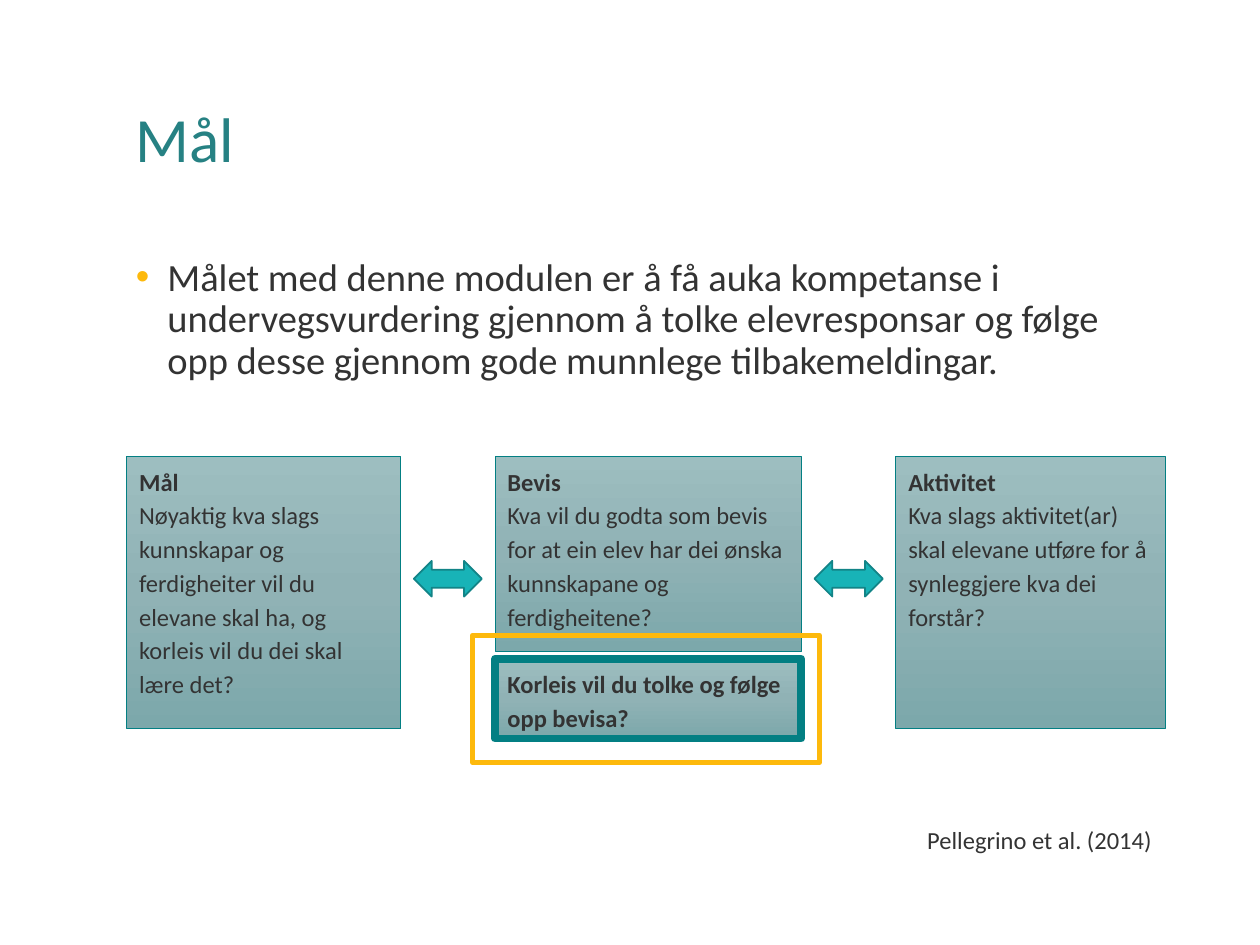
from copy import deepcopy

from lxml.etree import SubElement
from pptx import Presentation
from pptx.dml.color import RGBColor
from pptx.enum.shapes import MSO_SHAPE as Preset
from pptx.enum.text import MSO_ANCHOR as Anchor, PP_ALIGN as Align
from pptx.oxml.ns import qn
from pptx.util import Pt

# Content: lengths in points, boxes as left, top, width, height
TITLE = "Mål"
GOAL = ("Målet med denne modulen er å få auka kompetanse i undervegsvurdering "
        "gjennom å tolke elevresponsar og følge opp desse gjennom gode munnlege "
        "tilbakemeldingar.")
SOURCE = "Pellegrino et al. (2014)"

ROW_TOP = 260.6
COLUMNS = [  # left, width, height, heading, question
    (72.4, 156.6, 155.8, "Mål",
     "Nøyaktig kva slags kunnskapar og ferdigheiter vil du elevane skal ha, "
     "og korleis vil du dei skal lære det?"),
    (282.9, 175, 111.5, "Bevis",
     "Kva vil du godta som bevis for at ein elev har dei ønska kunnskapane "
     "og ferdigheitene?"),
    (512, 153.8, 155.8, "Aktivitet",
     "Kva slags aktivitet(ar) skal elevane utføre for å synleggjere kva dei "
     "forstår?"),
]
FOLLOW_UP = "Korleis vil du tolke og følge opp bevisa?"
FOLLOW_UP_BOX = (282.9, 376.4, 175, 45.6)
HIGHLIGHT_BOX = (270, 363, 198.2, 72.6)

ARROW_TOP, ARROW_HEIGHT, ARROW_GAP = 320.5, 20.4, 7.5
GRADIENT = [(0, "9DBEC0"), (0.5, "90B2B5"), (1, "7CA8AB")]
TEAL, YELLOW, DARK = "037F83", "FDB90C", "333333"


def color(value):
    return RGBColor.from_string(value)


def write(shape, paragraphs, size=14, text_color=DARK, spacing=1.0,
          anchor=Anchor.TOP):
    """Fill a shape with (text, bold) paragraphs."""
    frame = shape.text_frame
    frame.word_wrap = True
    frame.vertical_anchor = anchor
    for index, (text, bold) in enumerate(paragraphs):
        paragraph = frame.add_paragraph() if index else frame.paragraphs[0]
        paragraph.alignment = Align.LEFT
        paragraph.line_spacing = spacing
        run = paragraph.add_run()
        run.text = text
        run.font.color.rgb = color(text_color)
        for name, value in {"name": "Calibri", "size": Pt(size), "bold": bold}.items():
            setattr(run.font, name, value)


def add_text(slide, box, text, **style):
    shape = slide.shapes.add_textbox(*map(Pt, box))
    write(shape, [(text, False)], **style)
    return shape


def add_shape(slide, preset, box, line_color, line_width):
    shape = slide.shapes.add_shape(preset, *map(Pt, box))
    shape.shadow.inherit = False
    shape.line.color.rgb = color(line_color)
    shape.line.width = Pt(line_width)
    return shape


def add_card(slide, box, line_width, paragraphs):
    """Rectangle with the three-stop vertical gradient."""
    shape = add_shape(slide, Preset.RECTANGLE, box, TEAL, line_width)
    shape.fill.gradient()
    shape.fill.gradient_angle = 270
    stop_list = next(shape._element.spPr.iter(qn("a:gsLst")))
    stop_list.append(deepcopy(stop_list[0]))
    for stop, (position, value) in zip(shape.fill.gradient_stops, GRADIENT):
        stop.position = position
        stop.color.rgb = color(value)
    write(shape, paragraphs, spacing=1.15)


def add_bullet(paragraph, bullet_color, indent):
    properties = paragraph._p.get_or_add_pPr()
    properties.set("marL", str(Pt(indent)))
    properties.set("indent", str(-Pt(indent)))
    bullet = SubElement(properties, qn("a:buClr"))
    SubElement(bullet, qn("a:srgbClr"), val=bullet_color)
    SubElement(properties, qn("a:buFont"), typeface="Arial")
    SubElement(properties, qn("a:buChar"), char="•")


def main():
    presentation = Presentation()
    presentation.slide_width, presentation.slide_height = Pt(720), Pt(540)
    slide = presentation.slides.add_slide(presentation.slide_layouts[6])

    # Title and goal
    add_text(slide, (70.6, 28.8, 597, 104.4), TITLE, size=36,
             text_color="268183", spacing=0.9, anchor=Anchor.MIDDLE)
    goal = add_text(slide, (70.6, 144, 597, 100), GOAL, size=22, spacing=0.9)
    add_bullet(goal.text_frame.paragraphs[0], YELLOW, 18)

    # Three columns
    for left, width, height, heading, question in COLUMNS:
        add_card(slide, (left, ROW_TOP, width, height), 0.5,
                 [(heading, True), (question, False)])

    # Double arrows in the gaps between neighbouring columns
    for (left, width, *_), (next_left, *_) in zip(COLUMNS, COLUMNS[1:]):
        start = left + width + ARROW_GAP
        box = (start, ARROW_TOP, next_left - ARROW_GAP - start, ARROW_HEIGHT)
        arrow = add_shape(slide, Preset.LEFT_RIGHT_ARROW, box, "128487", 1)
        arrow.fill.solid()
        arrow.fill.fore_color.rgb = color("18B3B7")

    # Follow-up question with its highlight frame
    add_card(slide, FOLLOW_UP_BOX, 4.5, [(FOLLOW_UP, True)])
    highlight = add_shape(slide, Preset.RECTANGLE, HIGHLIGHT_BOX, YELLOW, 3)
    highlight.fill.background()

    # Source
    add_text(slide, (522.7, 468, 145.5, 24.5), SOURCE)

    presentation.save("out.pptx")


if __name__ == "__main__":
    main()
